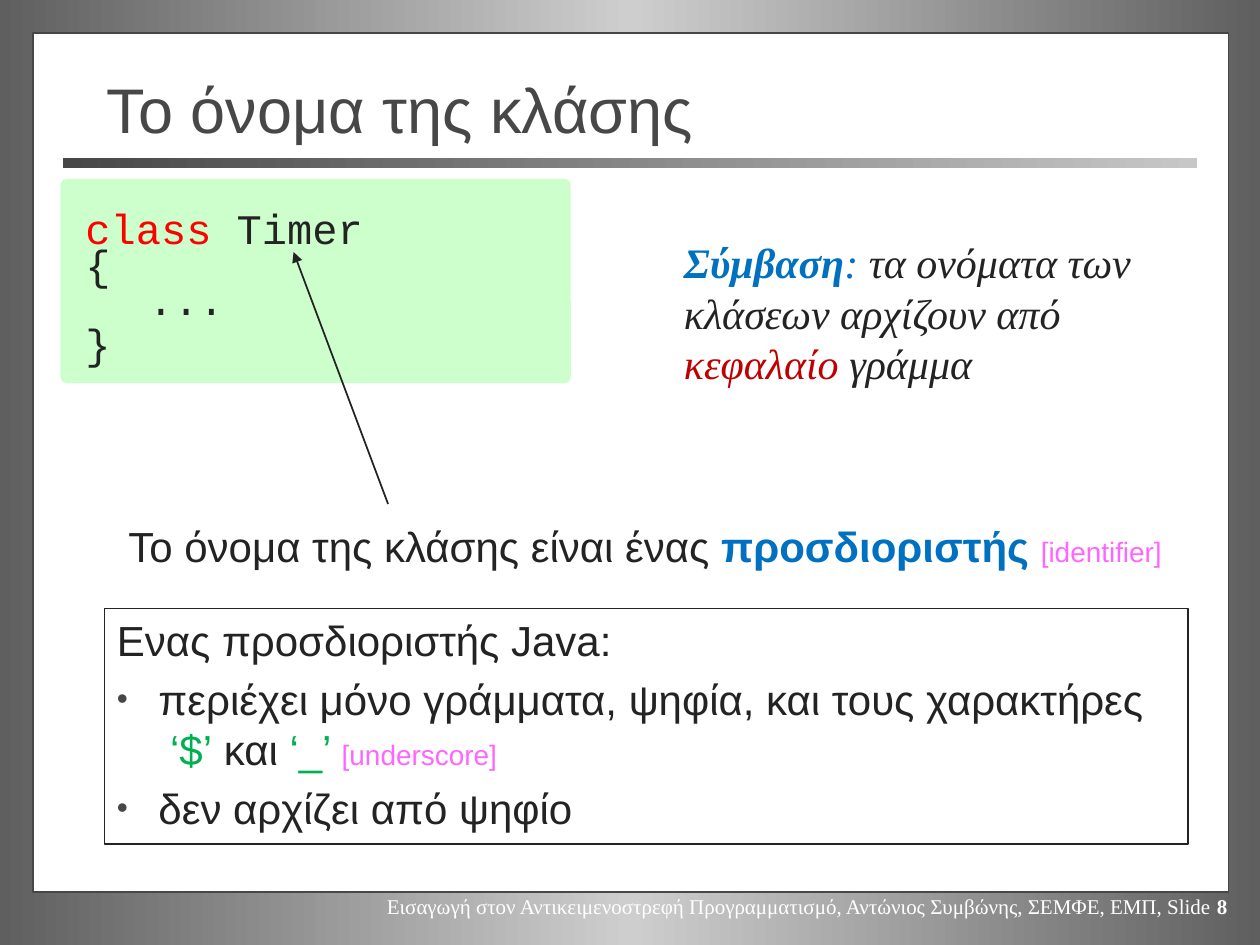
import copy
from dataclasses import dataclass

import lxml.etree
import pptx
import pptx.dml.color
import pptx.enum.shapes
import pptx.enum.text
import pptx.oxml.ns
import pptx.util

Inches = pptx.util.Inches
Pt = pptx.util.Pt
qn = pptx.oxml.ns.qn
ShapeKind = pptx.enum.shapes.MSO_SHAPE
Align = pptx.enum.text.PP_ALIGN
Anchor = pptx.enum.text.MSO_ANCHOR


@dataclass(frozen=True)
class Theme:
    sans: str = "Arial"
    serif: str = "Times New Roman"
    mono: str = "Courier New"
    title_size: int = 36
    body_size: int = 24
    note_size: int = 16
    footer_size: int = 12
    space_before: float = 4.8
    ink: str = "232323"
    grey: str = "474747"
    light_grey: str = "C7C7C7"
    edge: str = "5F5F5F"
    middle: str = "CECECE"
    white: str = "FFFFFF"
    code_panel: str = "CCFFCC"
    keyword: str = "FF0000"
    term: str = "0070C0"
    note: str = "FF66FF"
    symbol: str = "00B050"
    emphasis: str = "C00000"


THEME = Theme()
NOTE = {"color": THEME.note, "size": THEME.note_size}


def rgb(value):
    return pptx.dml.color.RGBColor.from_string(value)


def set_gradient(fill, owner, colors):
    """Spread the colours evenly from left to right."""
    fill.gradient()
    fill.gradient_angle = 0
    stop_list = next(owner.iter(qn("a:gsLst")))
    while len(stop_list) < len(colors):
        stop_list.append(copy.deepcopy(stop_list[-1]))
    for index, (stop, color) in enumerate(zip(fill.gradient_stops, colors)):
        stop.position = index / (len(colors) - 1)
        stop.color.rgb = rgb(color)


def add_box(slide, place, kind=ShapeKind.RECTANGLE, fill=None, line=None):
    shape = slide.shapes.add_shape(kind, *map(Inches, place))
    shape.shadow.inherit = False
    if fill:
        shape.fill.solid()
        shape.fill.fore_color.rgb = rgb(fill)
    else:
        shape.fill.background()
    if line:
        shape.line.color.rgb = rgb(line)
        shape.line.width = Pt(1)
    else:
        shape.line.fill.background()
    return shape


def style_font(font, color=None, size=None, bold=None, italic=None, name=None):
    if color:
        font.color.rgb = rgb(color)
    if size:
        font.size = Pt(size)
    if bold is not None:
        font.bold = bold
    if italic is not None:
        font.italic = italic
    if name:
        font.name = name


def write_text(shape, paragraphs, base, align=Align.LEFT, anchor=Anchor.TOP,
               space_before=THEME.space_before, line_spacing=None):
    """Each paragraph is a list of (text, font changes); None breaks the line."""
    frame = shape.text_frame
    frame.word_wrap = True
    frame.vertical_anchor = anchor
    for index, runs in enumerate(paragraphs):
        paragraph = frame.add_paragraph() if index else frame.paragraphs[0]
        paragraph.alignment = align
        paragraph.space_before = Pt(space_before)
        if line_spacing:
            paragraph.line_spacing = line_spacing
        style_font(paragraph.font, **base)
        for item in runs:
            if item is None:
                paragraph.add_line_break()
                continue
            text, changes = item
            run = paragraph.add_run()
            run.text = text
            style_font(run.font, **{"color": base["color"], "size": base["size"], **changes})


def add_text(slide, place, paragraphs, base, **options):
    write_text(slide.shapes.add_textbox(*map(Inches, place)), paragraphs, base, **options)


def add_bullet(paragraph, indent=0.33):
    properties = paragraph._p.get_or_add_pPr()
    properties.set("marL", str(Inches(indent)))
    properties.set("indent", str(-Inches(indent)))
    color = lxml.etree.Element(qn("a:buClr"))
    lxml.etree.SubElement(color, qn("a:srgbClr"), val=THEME.grey)
    bullet = [
        color,
        lxml.etree.Element(qn("a:buSzPct"), val="75000"),
        lxml.etree.Element(qn("a:buFont"), typeface=THEME.sans),
        lxml.etree.Element(qn("a:buChar"), char="•"),
    ]
    default_font = properties.find(qn("a:defRPr"))
    for element in bullet:
        default_font.addprevious(element)


def add_arrow(slide, start, end):
    arrow = slide.shapes.add_connector(
        pptx.enum.shapes.MSO_CONNECTOR.STRAIGHT, *map(Inches, start + end))
    arrow.line.color.rgb = rgb(THEME.ink)
    arrow.line.width = Pt(1)
    lxml.etree.SubElement(arrow.line._get_or_add_ln(), qn("a:tailEnd"), type="triangle")
    lxml.etree.SubElement(arrow._element.spPr, qn("a:effectLst"))


def add_frame(slide):
    set_gradient(slide.background.fill, slide.element, [THEME.edge, THEME.middle, THEME.edge])
    add_box(slide, (0.26, 0.26, 9.49, 6.82), fill=THEME.white, line=THEME.grey)
    footer = {"name": THEME.serif, "size": THEME.footer_size, "color": THEME.white}
    add_text(slide, (2.84, 7.04, 7, 0.3), [[
        ("Εισαγωγή στον Αντικειμενοστρεφή Προγραμματισμό, "
         "Αντώνιος Συμβώνης, ΣΕΜΦΕ, ΕΜΠ, Slide ", {}),
        ("8", {"bold": True}),
    ]], footer, align=Align.RIGHT, space_before=0)
    rule = add_box(slide, (0.5, 1.25, 9, 0.08))
    set_gradient(rule.fill, rule._element, [THEME.grey, THEME.light_grey])


def main():
    presentation = pptx.Presentation()
    presentation.slide_width, presentation.slide_height = Inches(10), Inches(7.5)
    slide = presentation.slides.add_slide(presentation.slide_layouts[6])
    body = {"name": THEME.sans, "size": THEME.body_size, "color": THEME.ink}

    add_frame(slide)

    # Title
    add_text(slide, (0.75, 0.55, 8.5, 0.62), [[("Το όνομα της κλάσης", {})]],
             {**body, "size": THEME.title_size, "color": THEME.grey},
             anchor=Anchor.MIDDLE, space_before=0)

    # Code example
    panel = add_box(slide, (0.48, 1.42, 4.05, 1.62), ShapeKind.ROUNDED_RECTANGLE, THEME.code_panel)
    panel.adjustments[0] = 0.03
    add_text(slide, (0.58, 1.67, 7.25, 1.34), [
        [("class", {"color": THEME.keyword}), (" Timer", {}), None, ("{", {}), None, ("\t...", {})],
        [("}", {})],
    ], {**body, "name": THEME.mono}, line_spacing=0.7)

    # Explanation pointing at the class name
    add_text(slide, (0.92, 4.08, 8.49, 0.5), [[
        ("Το όνομα της κλάσης είναι ένας ", {}),
        ("προσδιοριστής ", {"color": THEME.term, "bold": True}),
        ("[identifier]", NOTE),
    ]], body)
    add_arrow(slide, (3.08, 4), (2.33, 2))

    # Identifier rules
    rules = add_box(slide, (0.83, 4.83, 8.6, 1.87), line=THEME.ink)
    symbol = {"color": THEME.symbol}
    write_text(rules, [
        [("Ενας προσδιοριστής Java:", {})],
        [("περιέχει μόνο γράμματα, ψηφία, και τους χαρακτήρες", {}), None,
         (" ‘$’", symbol), (" και ", {}), ("‘_’ ", symbol), ("[underscore]", NOTE)],
        [("δεν αρχίζει από ψηφίο", {})],
    ], body)
    for paragraph in rules.text_frame.paragraphs[1:]:
        add_bullet(paragraph)

    # Naming convention
    add_text(slide, (5.33, 1.83, 4.17, 1.31), [[
        ("Σύμβαση", {"color": THEME.term, "bold": True}),
        (": ", {"color": THEME.term}),
        ("τα ονόματα των κλάσεων αρχίζουν από ", {}),
        ("κεφαλαίο", {"color": THEME.emphasis}),
        (" γράμμα", {}),
    ]], {**body, "name": THEME.serif, "italic": True})

    presentation.save("out.pptx")


if __name__ == "__main__":
    main()
